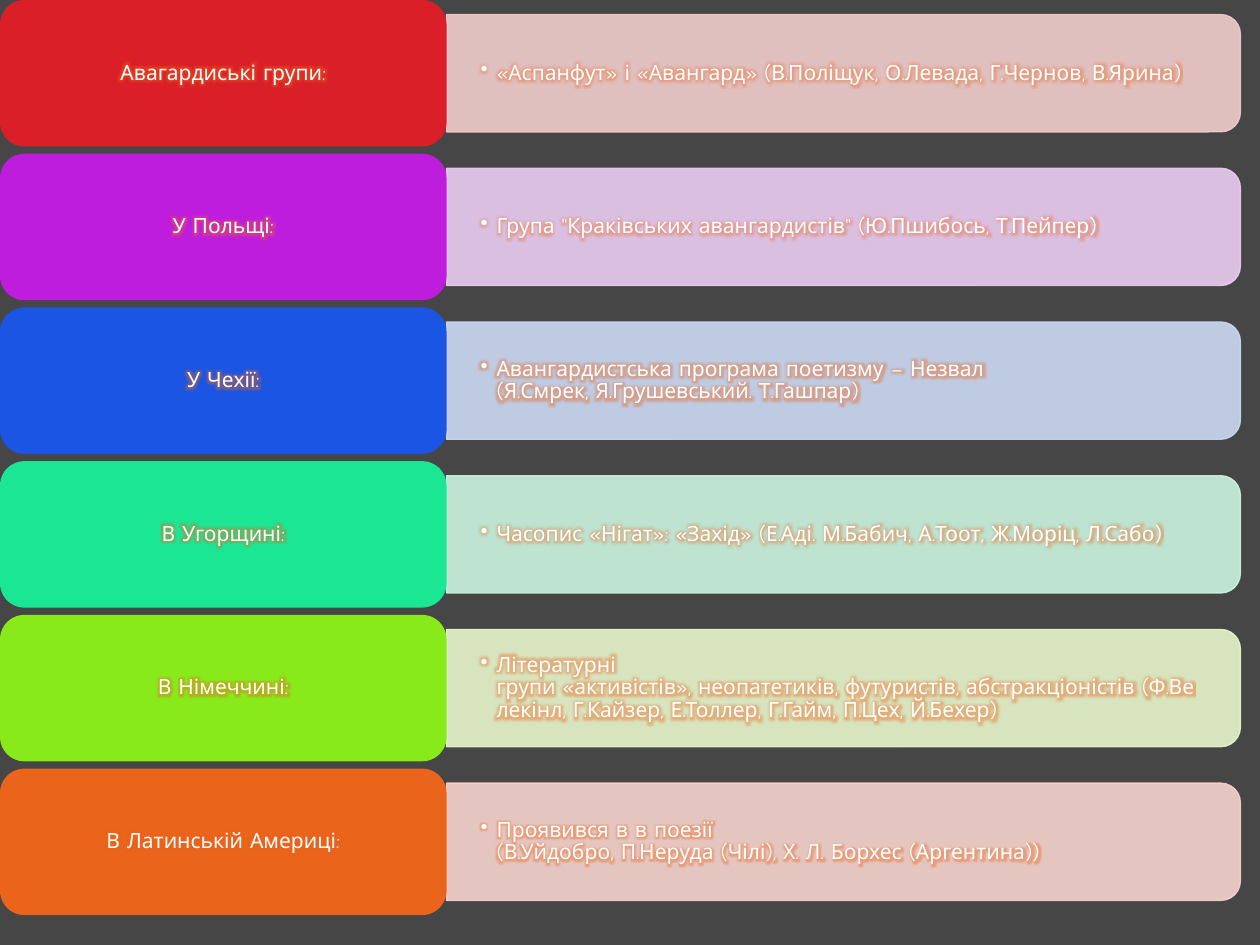
from lxml import etree
from pptx import Presentation
from pptx import util as u
from pptx.dml.color import RGBColor
from pptx.enum import shapes, text
from pptx.oxml import ns

COLORS = {"background": "464646", "text": "FFFFFF", "glow": "EB641B"}
FONT = "Comic Neue"
TIE, NO_BREAK_SPACE = "_", chr(160)
LABEL_WIDTH, LABEL_HEIGHT, ROW_PITCH = 255.2, 83.7, 87.84
PANEL_WIDTH, PANEL_HEIGHT = 453.6, 67
DETAIL_WIDTH, DETAIL_HEIGHT = 450, 60.5

# label, label colour, detail, panel colour; a tie stands for a no-break space
GROUPS = [
    ("Авагардиські групи:", "DA1F28",
     "«Аспанфут»_і_«Авангард»_(В.Поліщук,_О.Левада,_Г.Чернов,_В.Ярина)", "F1CDCD"),
    ("У_Польщі:", "BE1DDE",
     "Група \"Краківських авангардистів\"_(Ю.Пшибось,_Т.Пейпер)", "ECCDF2"),
    ("У_Чехії:", "1B55E3",
     "Авангардистська_програма_поетизму – Незвал (Я.Смрек,_Я.Грушевський._Т.Гашпар)",
     "CDDAF4"),
    ("В Угорщині:", "1BE693",
     "Часопис_«Нігат»:_«Захід»_(Е.Аді._М.Бабич,_А.Тоот,_Ж.Моріц,_Л.Сабо)", "CCF5E0"),
    ("В Німеччині:", "88E91B",
     "Літературні групи_«активістів»,_неопатетиків,_футуристів,_абстракціоністів_"
     "(Ф.Велекінл, Г.Кайзер, Е.Толлер, Г.Гайм, П.Цех,_Й.Бехер)", "E8F6CC"),
    ("В_Латинській Америці:", "EB641B",
     "Проявився в в_поезії (В.Уйдобро,_П.Неруда_(Чілі),_Х._Л._Борхес_(Аргентина))",
     "F7D3CD"),
]


def add_child(parent, tag, **attributes):
    return etree.SubElement(parent, ns.qn(tag), attributes)


def set_alpha(fill, percent):
    """Make a solid fill partly transparent."""
    color = fill._xPr.find(ns.qn("a:solidFill"))[0]
    add_child(color, "a:alpha", val=str(percent * 1000))


def add_glow(run, radius, percent):
    effects = etree.Element(ns.qn("a:effectLst"))
    glow = add_child(effects, "a:glow", rad=str(int(u.Pt(radius))))
    color = add_child(glow, "a:srgbClr", val=COLORS["glow"])
    add_child(color, "a:alpha", val=str(percent * 1000))
    run.font.fill._xPr.find(ns.qn("a:solidFill")).addnext(effects)


def write_text(frame, words, size=12, align=text.PP_ALIGN.LEFT, margins=(0, 0), bullet_indent=0):
    """Fill a frame with one paragraph; margins are (horizontal, vertical)."""
    frame.word_wrap = True
    frame.vertical_anchor = text.MSO_ANCHOR.MIDDLE
    frame.margin_left = frame.margin_right = u.Pt(margins[0])
    frame.margin_top = frame.margin_bottom = u.Pt(margins[1])
    paragraph = frame.paragraphs[0]
    paragraph.alignment = align
    paragraph.line_spacing = 0.9
    if bullet_indent:
        paragraph.level = 1
        properties = paragraph._p.get_or_add_pPr()
        indent = int(u.Pt(bullet_indent))
        properties.set("marL", str(indent))
        properties.set("indent", str(-indent))
        add_child(properties, "a:buChar", char="••")
    run = paragraph.add_run()
    run.text = words.replace(TIE, NO_BREAK_SPACE)
    run.font.size = u.Pt(size)
    run.font.name = FONT
    run.font.color.rgb = RGBColor.from_string(COLORS["text"])
    add_glow(run, radius=8, percent=40)


class GroupSlide:
    def __init__(self, slide):
        self.slide = slide
        background = slide.background.fill
        background.solid()
        background.fore_color.rgb = RGBColor.from_string(COLORS["background"])

    def block(self, kind, left, top, width, height, color):
        block = self.slide.shapes.add_shape(
            kind, u.Pt(left), u.Pt(top), u.Pt(width), u.Pt(height))
        block.shadow.inherit = False
        block.fill.solid()
        block.fill.fore_color.rgb = RGBColor.from_string(color)
        block.line.fill.background()
        return block

    def panel(self, middle, color):
        """Draw an upright shape turned so that its round corners face right."""
        panel = self.block(
            shapes.MSO_SHAPE.ROUND_2_SAME_RECTANGLE,
            LABEL_WIDTH + (PANEL_WIDTH - PANEL_HEIGHT) / 2, middle - PANEL_WIDTH / 2,
            PANEL_HEIGHT, PANEL_WIDTH, color)
        panel.rotation = 90
        panel.line.width = u.Pt(0.79)
        panel.line.color.rgb = RGBColor.from_string(color)
        set_alpha(panel.fill, 90)
        set_alpha(panel.line.fill, 90)

    def detail(self, middle, words):
        box = self.slide.shapes.add_textbox(
            u.Pt(LABEL_WIDTH), u.Pt(middle - DETAIL_HEIGHT / 2),
            u.Pt(DETAIL_WIDTH), u.Pt(DETAIL_HEIGHT))
        write_text(box.text_frame, words, margins=(19.5, 10), bullet_indent=9)

    def label(self, middle, words, color):
        label = self.block(
            shapes.MSO_SHAPE.ROUNDED_RECTANGLE, 0, middle - LABEL_HEIGHT / 2,
            LABEL_WIDTH, LABEL_HEIGHT, color)
        write_text(label.text_frame, words, align=text.PP_ALIGN.CENTER, margins=(3.6, 1.8))


def main():
    deck = Presentation()
    deck.slide_width, deck.slide_height = u.Pt(720), u.Pt(540)
    page = GroupSlide(deck.slides.add_slide(deck.slide_layouts[6]))
    for row, (name, label_color, members, panel_color) in enumerate(GROUPS):
        middle = row * ROW_PITCH + LABEL_HEIGHT / 2
        page.panel(middle, panel_color)
        page.detail(middle, members)
        page.label(middle, name, label_color)
    deck.save("out.pptx")


if __name__ == "__main__":
    main()
